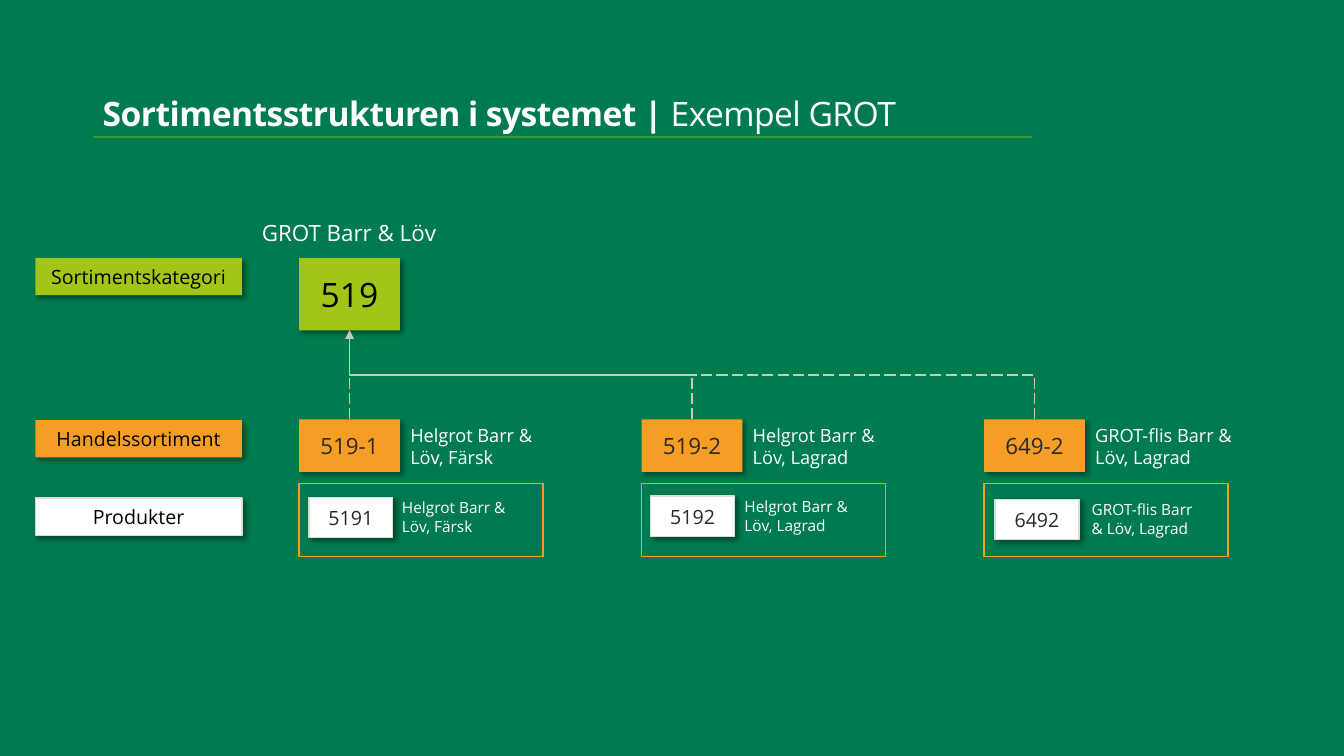
from lxml.etree import SubElement
from pptx import Presentation
from pptx.dml.color import RGBColor
from pptx.enum.dml import MSO_LINE
from pptx.enum.shapes import MSO_CONNECTOR as Link, MSO_SHAPE as Shape
from pptx.enum.text import MSO_ANCHOR as Anchor, PP_ALIGN as Align
from pptx.oxml.ns import qn
from pptx.util import Cm, Pt

COLORS = {
    "background": "007B4F", "rule": "3B9637", "lime": "A2C617", "orange": "F59D24",
    "white": "FFFFFF", "edge": "DFDCD8", "arrow": "CBC6C0", "black": "000000", "ink": "292929",
}
FONT = "Open Sans"
LEVELS = [
    ("Sortimentskategori", 6.5, "lime", None),
    ("Handelssortiment", 10.59, "orange", None),
    ("Produkter", 12.55, "white", "edge"),
]
ASSORTMENTS = [
    ("519-1", "Helgrot Barr & Löv, Färsk", "5191", 0.25, 1.96, 2.34),
    ("519-2", "Helgrot Barr & Löv, Lagrad", "5192", 0.23, 1.93, 2.34),
    ("649-2", "GROT-flis Barr & Löv, Lagrad", "6492", 0.28, 2.01, 2.46),
]
COLUMN_LEFT, COLUMN_TOP, COLUMN_STEP = 7.54, 10.57, 8.63


def color(key):
    """Return the named colour."""
    return RGBColor.from_string(COLORS[key])


def write(paragraph, text, size, ink, bold=False):
    """Add a formatted run to a paragraph."""
    run = paragraph.add_run()
    run.text = text
    for attribute, value in {"name": FONT, "size": Pt(size), "bold": bold}.items():
        setattr(run.font, attribute, value)
    run.font.color.rgb = color(ink)
    return run


def add_caption(slide, box, text, size, align=Align.LEFT, anchor=Anchor.TOP):
    """Place wrapped white text in a box given in centimetres."""
    frame = slide.shapes.add_textbox(*map(Cm, box)).text_frame
    for attribute, value in {"word_wrap": True, "vertical_anchor": anchor}.items():
        setattr(frame, attribute, value)
    frame.paragraphs[0].alignment = align
    write(frame.paragraphs[0], text, size, "white")


def add_box(slide, box, fill=None, edge=None):
    """Place a rectangle with an optional fill and outline."""
    rectangle = slide.shapes.add_shape(Shape.RECTANGLE, *map(Cm, box))
    rectangle.shadow.inherit = False
    if fill:
        rectangle.fill.solid()
        rectangle.fill.fore_color.rgb = color(fill)
    else:
        rectangle.fill.background()
    if edge:
        rectangle.line.color.rgb = color(edge)
        rectangle.line.width = Pt(1)
    else:
        rectangle.line.fill.background()
    return rectangle


def add_card(slide, box, text, size, ink, fill, edge=None):
    """Place a shadowed rectangle with centred text."""
    card = add_box(slide, box, fill, edge)
    effects = card._element.spPr.find(qn("a:effectLst"))
    shadow = SubElement(effects, qn("a:outerShdw"), blurRad=str(Pt(4)), dist=str(Pt(3)),
                        dir="2700000", algn="tl", rotWithShape="0")
    tint = SubElement(shadow, qn("a:srgbClr"), val=COLORS["black"])
    SubElement(tint, qn("a:alpha"), val="40000")
    card.text_frame.vertical_anchor = Anchor.MIDDLE
    card.text_frame.paragraphs[0].alignment = Align.CENTER
    write(card.text_frame.paragraphs[0], text, size, ink)
    return card


def add_line(slide, kind, start, end, ink, width):
    """Draw a connector without a shadow between two points."""
    line = slide.shapes.add_connector(kind, *start, *end)
    line.line.color.rgb = color(ink)
    line.line.width = Pt(width)
    SubElement(line._element.spPr, qn("a:effectLst"))
    return line


def link_up(slide, child, parent):
    """Join the top of a child card to the bottom of its parent by a dashed arrow."""
    start = child.left + child.width // 2, child.top
    end = parent.left + parent.width // 2, parent.top + parent.height
    run, rise = start[0] - end[0], start[1] - end[1]
    arrow = add_line(slide, Link.ELBOW if run else Link.STRAIGHT, start, end, "arrow", 1)
    arrow.line.dash_style = MSO_LINE.LONG_DASH
    SubElement(arrow.line._get_or_add_ln(), qn("a:tailEnd"), type="triangle")
    arrow.begin_connect(child, 0)
    arrow.end_connect(parent, 2)
    if run:
        turned = {"left": (start[0] + end[0] - rise) // 2, "top": (start[1] + end[1] - run) // 2,
                  "width": rise, "height": run}
        for attribute, value in turned.items():
            setattr(arrow, attribute, value)
        for attribute, value in {"rot": "16200000", "flipH": "0", "flipV": "1"}.items():
            arrow._element.spPr.xfrm.set(attribute, value)


def add_title(slide, left, top, width, height):
    """Place the slide title and the rule below it."""
    frame = slide.shapes.add_textbox(*map(Cm, (left, top, width, height))).text_frame
    frame.word_wrap = True
    for text, bold in (("Sortimentsstrukturen i systemet | ", True), ("Exempel GROT", False)):
        run = write(frame.paragraphs[0], text, 24, "white", bold)
        run.font._element.set("spc", "-40")
    rule_top = Cm(top + 1.24)
    add_line(slide, Link.STRAIGHT, (Cm(left), rule_top), (Cm(left + 23.67), rule_top), "rule", 1.5)


def add_levels(slide, left, width, height):
    """Place the labels of the three levels."""
    for label, top, fill, edge in LEVELS:
        add_card(slide, (left, top, width, height), label, 14, "black", fill, edge)


def add_category(slide, left, top, width, height):
    """Place the category card with its heading and return the card."""
    add_caption(slide, (left - 1.27, top - 1.09, width + 2.51, 0.94), "GROT Barr & Löv", 16, Align.CENTER)
    return add_card(slide, (left, top, width, height), "519", 24, "black", "lime")


def add_assortment(slide, left, top, code, name, product, inset, drop, name_inset):
    """Place one trade assortment with its product and return its card."""
    add_box(slide, (left, top + 1.62, 6.15, 1.83), edge="orange")
    add_card(slide, (left + inset, top + drop, 2.11, 1.02), product, 14, "ink", "white", "edge")
    add_caption(slide, (left + name_inset, top + drop - 0.1, 3.23, 1.19), name, 11, anchor=Anchor.MIDDLE)
    add_caption(slide, (left + 2.55, top, 4.17, 1.37), name, 13)
    return add_card(slide, (left, top, 2.54, 1.32), code, 16, "ink", "orange")


def main():
    """Build the slide and save it."""
    deck = Presentation()
    deck.slide_width, deck.slide_height = Cm(33.87), Cm(19.05)
    slide = deck.slides.add_slide(deck.slide_layouts[6])
    slide.background.fill.solid()
    slide.background.fill.fore_color.rgb = color("background")
    add_title(slide, 2.34, 2.21, 29.21, 2.49)
    add_levels(slide, 0.89, 5.21, 0.94)
    category = add_category(slide, COLUMN_LEFT, 6.5, 2.54, 1.83)
    for column, assortment in enumerate(ASSORTMENTS):
        card = add_assortment(slide, COLUMN_LEFT + column * COLUMN_STEP, COLUMN_TOP, *assortment)
        link_up(slide, card, category)
    deck.save("out.pptx")


if __name__ == "__main__":
    main()
